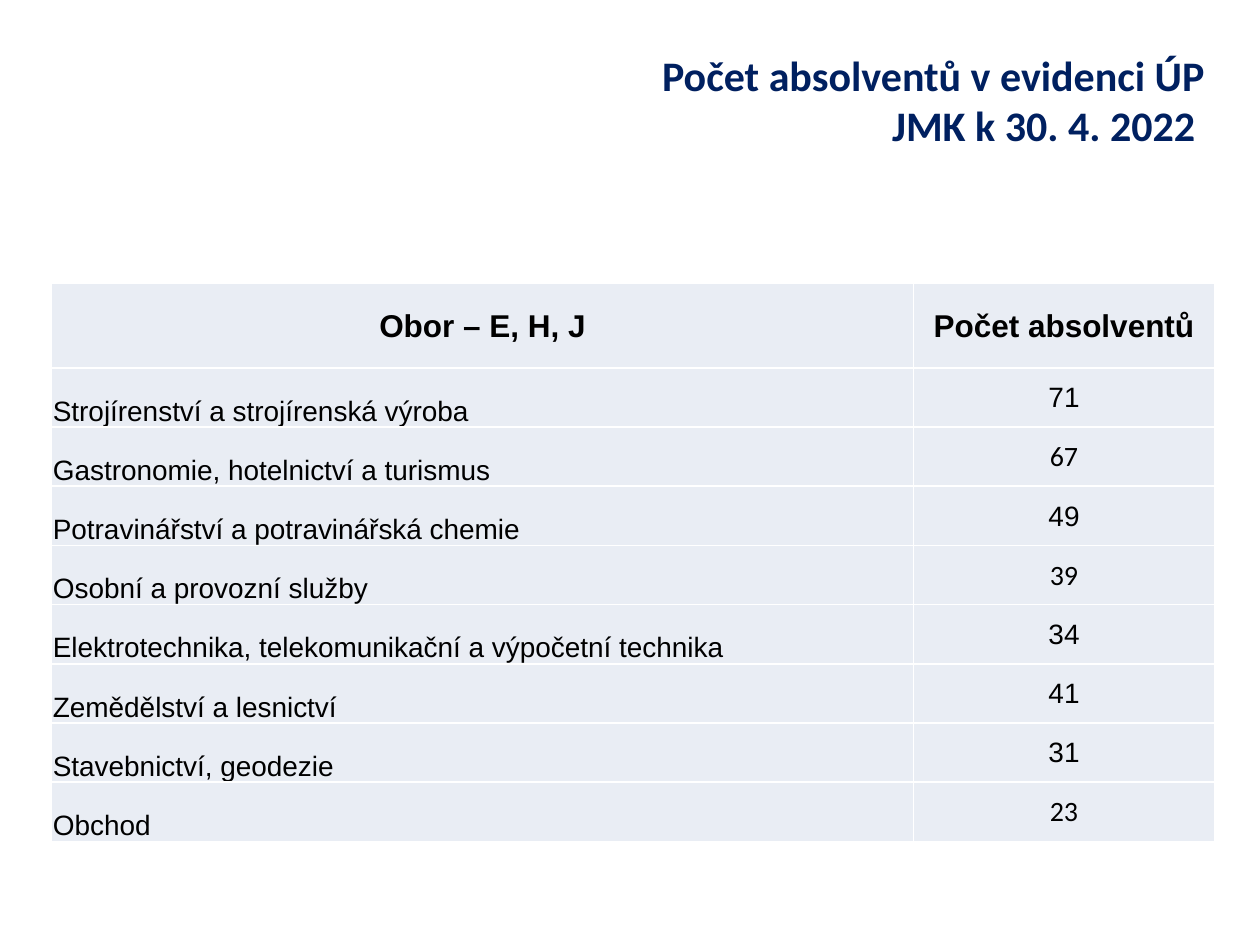
from lxml.etree import SubElement
from pptx import Presentation
from pptx.dml.color import RGBColor
from pptx.enum.text import MSO_ANCHOR as Anchor, PP_ALIGN as Align
from pptx.oxml.ns import qn
from pptx.util import Inches, Pt

COLORS = {"title": "002060", "text": "000000", "cell": "E9EDF4", "border": "FFFFFF"}
HEADERS = ("Obor – E, H, J", "Počet absolventů")
GRADUATES = [
    ("Strojírenství a strojírenská výroba", 71, "Arial"),
    ("Gastronomie, hotelnictví a turismus", 67, "Calibri"),
    ("Potravinářství a potravinářská chemie", 49, "Arial"),
    ("Osobní a provozní služby", 39, "Calibri"),
    ("Elektrotechnika, telekomunikační a výpočetní technika", 34, "Arial"),
    ("Zemědělství a lesnictví", 41, "Arial"),
    ("Stavebnictví, geodezie", 31, "Arial"),
    ("Obchod", 23, "Calibri"),
]


def write(frame, text, font, size, color, align, bold=False):
    """Put one formatted paragraph into a text frame."""
    paragraph = frame.paragraphs[0]
    paragraph.text = text
    paragraph.alignment = align
    for run in paragraph.runs:
        run.font.name = font
        run.font.size = Pt(size)
        run.font.bold = bold
        run.font.color.rgb = RGBColor.from_string(COLORS[color])


def add_borders(cell):
    """Draw a thin line on every side of a cell."""
    properties = cell._tc.get_or_add_tcPr()
    for side in ("a:lnL", "a:lnR", "a:lnT", "a:lnB"):
        line = SubElement(properties, qn(side), w=str(Pt(1)))
        fill = SubElement(line, qn("a:solidFill"))
        SubElement(fill, qn("a:srgbClr"), val=COLORS["border"])


def fill_cell(cell, text, font="Arial", size=16, align=Align.CENTER,
              anchor=Anchor.MIDDLE, bold=False):
    """Style one table cell and write its text."""
    add_borders(cell)
    cell.fill.solid()
    cell.fill.fore_color.rgb = RGBColor.from_string(COLORS["cell"])
    cell.margin_left = cell.margin_right = cell.margin_top = Inches(0.01)
    cell.margin_bottom = 0
    cell.vertical_anchor = anchor
    write(cell.text_frame, text, font, size, "text", align, bold)


def add_title(slide):
    """Add the right-aligned heading."""
    frame = slide.shapes.add_textbox(
        Inches(2.42), Inches(0.34), Inches(7.24), Inches(1.26)).text_frame
    frame.word_wrap = True
    frame.vertical_anchor = Anchor.TOP
    write(frame, "Počet absolventů v evidenci ÚP\vJMK k 30. 4. 2022 ",
          "Calibri", 24, "title", Align.RIGHT, bold=True)


def add_graduates_table(slide):
    """Add the table of graduates by field of study."""
    table = slide.shapes.add_table(
        len(GRADUATES) + 1, len(HEADERS),
        Inches(0.41), Inches(2.25), Inches(9.23), Inches(4.43)).table
    for column, width in zip(table.columns, (6.84, 2.39)):
        column.width = Inches(width)
    for index, row in enumerate(table.rows):
        row.height = Inches(0.47 if index else 0.67)
    for column, header in enumerate(HEADERS):
        fill_cell(table.cell(0, column), header, size=18, bold=True)
    for row, (field, count, count_font) in enumerate(GRADUATES, start=1):
        fill_cell(table.cell(row, 0), field, align=Align.LEFT, anchor=Anchor.BOTTOM)
        fill_cell(table.cell(row, 1), str(count), font=count_font)


def main():
    """Build and save the slide."""
    deck = Presentation()
    deck.slide_width, deck.slide_height = Inches(10), Inches(7.5)
    slide = deck.slides.add_slide(deck.slide_layouts[6])
    add_title(slide)
    add_graduates_table(slide)
    deck.save("out.pptx")


if __name__ == "__main__":
    main()
